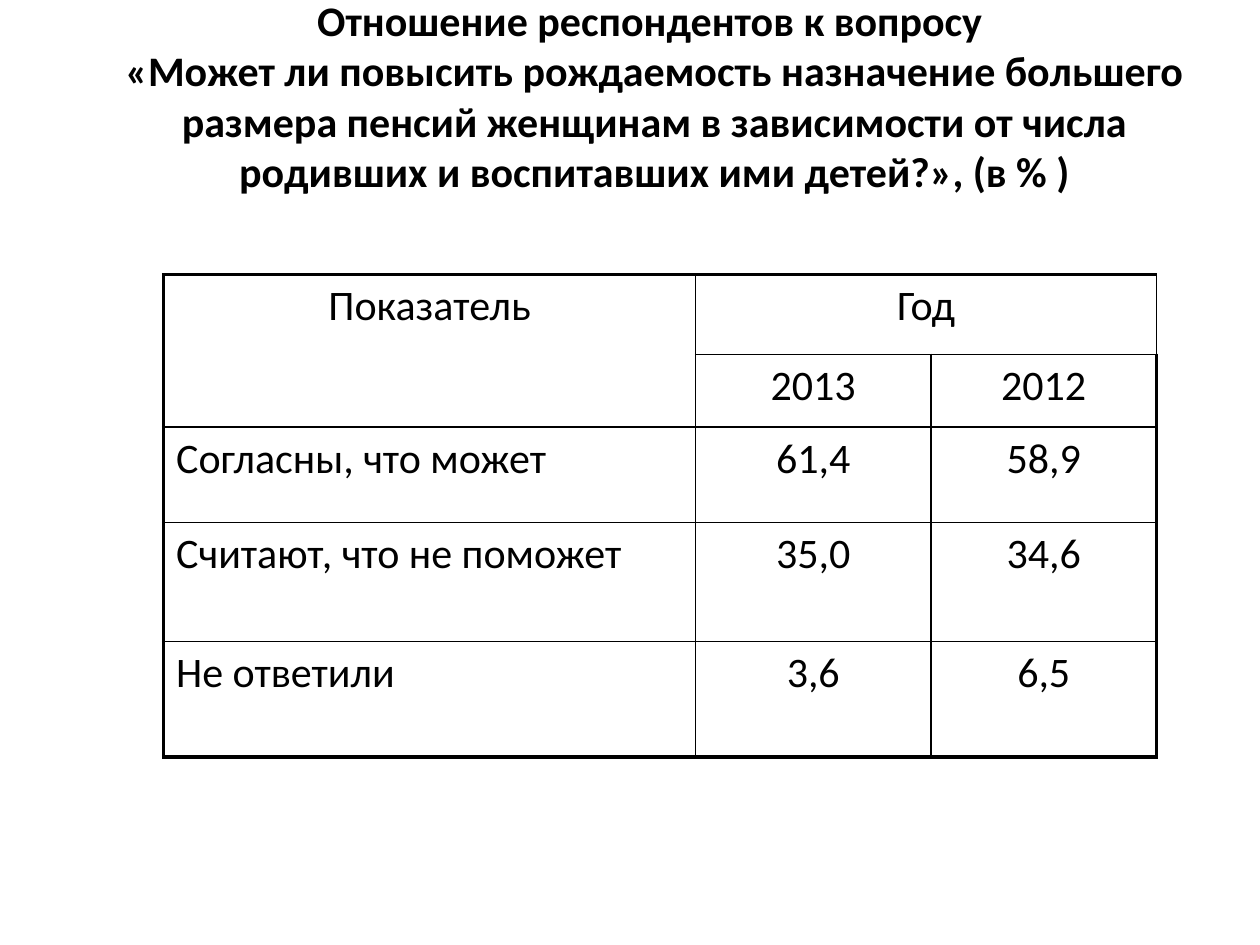
from lxml import etree
from pptx import Presentation
from pptx.dml.color import RGBColor
from pptx.enum import text as t
from pptx.oxml.ns import qn
from pptx.util import Pt

BLACK = RGBColor(0, 0, 0)
THICK, THIN = Pt(2.25), Pt(1)


def write(frame, words, size=24, bold=False, align=t.PP_ALIGN.CENTER):
    frame.text = words
    for par in frame.paragraphs:
        par.alignment = align
        for run in par.runs:
            font = run.font
            font.name, font.size, font.bold = "Calibri", Pt(size), bold
            font.color.rgb = BLACK


def border(cell, sides):
    """Draw black cell borders; sides maps L, R, T and B to line widths."""
    props = cell._tc.get_or_add_tcPr()
    for side, width in sides.items():
        line = etree.SubElement(props, qn(f"a:ln{side}"), w=str(width))
        fill = etree.SubElement(line, qn("a:solidFill"))
        etree.SubElement(fill, qn("a:srgbClr"), val=str(BLACK))


prs = Presentation()
prs.slide_width, prs.slide_height = Pt(720), Pt(540)
slide = prs.slides.add_slide(prs.slide_layouts[5])

title = slide.shapes.title
title.left, title.top, title.width, title.height = Pt(42.5), Pt(15), Pt(663), Pt(108)
frame = title.text_frame
frame.word_wrap = True
frame.auto_size = t.MSO_AUTO_SIZE.NONE
frame.vertical_anchor = t.MSO_ANCHOR.MIDDLE
frame.margin_bottom = Pt(33)
write(frame, "Отношение респондентов к вопросу \v«Может ли повысить рождаемость "
      "назначение большего размера пенсий женщинам в зависимости от числа "
      "родивших и воспитавших ими детей?», (в % )", bold=True)

rows = [
    ("Показатель", "Год", ""),
    ("", "2013", "2012"),
    ("Согласны, что может", "61,4", "58,9"),
    ("Считают, что не поможет", "35,0", "34,6"),
    ("Не ответили", "3,6", "6,5"),
]
widths = [304, 134.5, 129]
heights = [45.5, 41.5, 54.5, 68, 66]

table = slide.shapes.add_table(len(rows), len(widths), Pt(93.5), Pt(157),
                               Pt(sum(widths)), Pt(sum(heights))).table
table.first_row = table.horz_banding = False
for col, width in zip(table.columns, widths):
    col.width = Pt(width)
for row, height in zip(table.rows, heights):
    row.height = Pt(height)
table.cell(0, 0).merge(table.cell(1, 0))
table.cell(0, 1).merge(table.cell(0, 2))

for r, row in enumerate(rows):
    for c, words in enumerate(row):
        cell = table.cell(r, c)
        border(cell, {
            "L": THICK if c == 0 else THIN,
            "R": THICK if c == len(widths) - 1 else THIN,
            "T": THICK if r == 0 else THIN,
            "B": THICK if r == len(rows) - 1 else THIN,
        })
        cell.fill.background()
        if words:
            label = c == 0 and r > 0
            write(cell.text_frame, words,
                  align=t.PP_ALIGN.LEFT if label else t.PP_ALIGN.CENTER)

prs.save("out.pptx")
